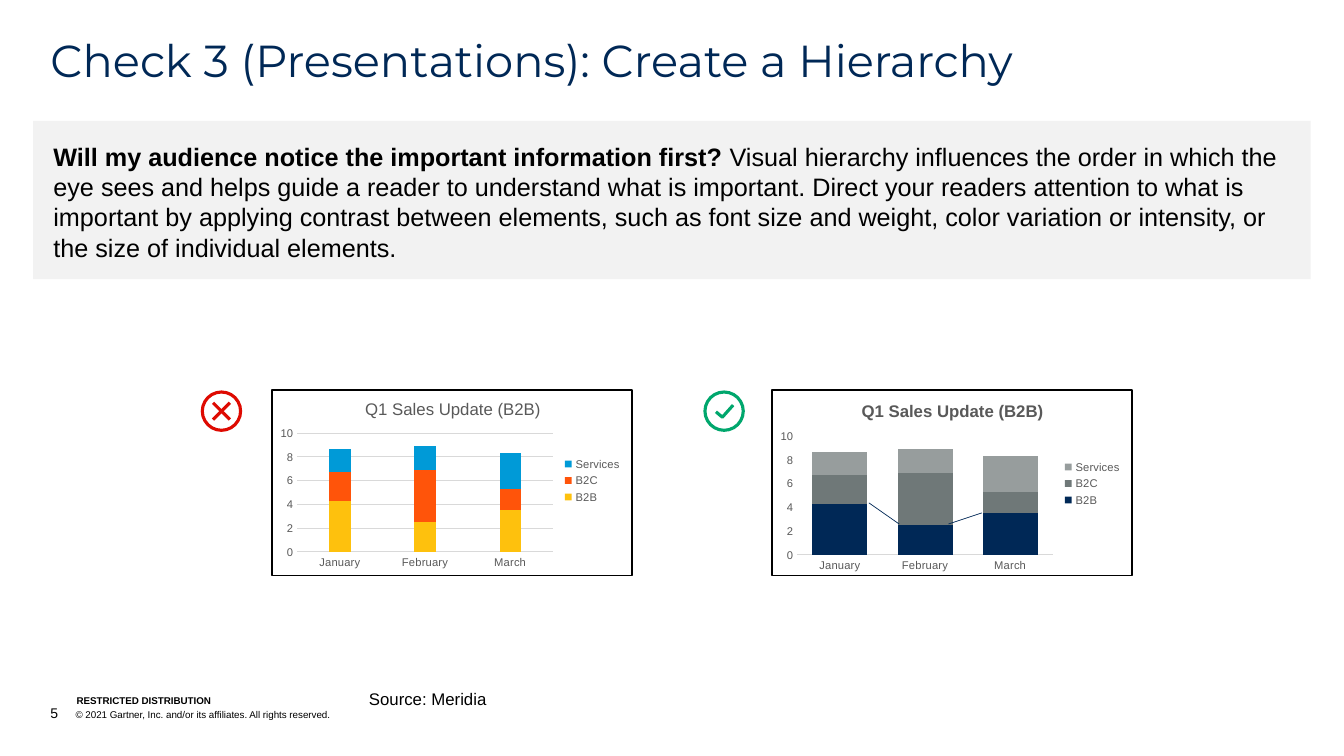
from lxml import etree
from pptx import Presentation
from pptx import util as u
from pptx.chart.data import CategoryChartData
from pptx.dml.color import RGBColor
from pptx.enum import chart as charts, shapes, text
from pptx.oxml import ns


class Theme:
    navy = RGBColor.from_string("002856")
    black = RGBColor.from_string("000000")
    white = RGBColor.from_string("FFFFFF")
    panel = RGBColor.from_string("F2F2F2")
    label = RGBColor.from_string("595959")
    rule = RGBColor.from_string("D9D9D9")
    wrong = RGBColor.from_string("DE0A01")
    right = RGBColor.from_string("00A76D")
    vivid = [RGBColor.from_string(c) for c in ("FEC10D", "FF540A", "009AD7")]
    focused = [RGBColor.from_string(c) for c in ("002856", "6F7878", "979D9D")]
    heading_font, body_font = "Montserrat", "Arial"
    heading, body, caption, number, axis, legal = map(u.Pt, (32, 18, 12, 10, 8, 7))


deck = Presentation()
deck.slide_width, deck.slide_height = u.Inches(13.33), u.Inches(7.5)
page = deck.slides.add_slide(deck.slide_layouts[6])
cell = deck.slide_width / 40  # square grid, 40 columns across


def write(box, spans, margins=(0, 0, 0, 0), anchor=text.MSO_ANCHOR.TOP, wrap=True):
    """Fill a box with one paragraph of (words, size, bold, colour, font) spans."""
    frame = box.text_frame
    frame.word_wrap, frame.vertical_anchor = wrap, anchor
    (frame.margin_left, frame.margin_top,
     frame.margin_right, frame.margin_bottom) = map(u.Inches, margins)
    para = frame.paragraphs[0]
    para.alignment = text.PP_ALIGN.LEFT
    for words, size, bold, colour, font in spans:
        span = para.add_run()
        span.text = words
        span.font.size, span.font.bold, span.font.name = size, bold, font
        span.font.color.rgb = colour
    return para


def arrange(chart, part, index, **shares):
    """Place a chart part by shares of the chart's size."""
    owner = chart._chartSpace.xpath("c:chart/c:" + part)[0]
    layout = owner.find(ns.qn("c:layout"))
    if layout is None:
        layout = etree.Element(ns.qn("c:layout"))
        owner.insert(index, layout)
    manual = etree.SubElement(layout, ns.qn("c:manualLayout"))
    if part == "plotArea":
        etree.SubElement(manual, ns.qn("c:layoutTarget")).set("val", "inner")
    for side in ("xMode", "yMode"):
        etree.SubElement(manual, ns.qn("c:" + side)).set("val", "edge")
    for side, share in shares.items():
        etree.SubElement(manual, ns.qn("c:" + side)).set("val", str(share))


# Footer, title and source
black, arial = Theme.black, Theme.body_font
bottom, top = text.MSO_ANCHOR.BOTTOM, text.MSO_ANCHOR.TOP
labels = [
    ((2.28, 20.67, 7.59, 0.36), (0, 0, 0, 0), bottom, True,
     [("RESTRICTED DISTRIBUTION", Theme.legal, True, black, arial)]),
    ((1.5, 20.97, 23.97, 0.51), (0, 0, 0, 0), bottom, True,
     [("5", Theme.number, False, black, arial),
      ("\t© 2021 Gartner, Inc. and/or its affiliates. All rights reserved.",
       Theme.legal, False, black, arial)]),
    ((1.5, 1.17, 37, 1.47), (0, 0, 0, 0), top, True,
     [("Check 3 (Presentations): Create a Hierarchy",
       Theme.heading, False, Theme.navy, Theme.heading_font)]),
    ((10.98, 20.36, 3.9, 0.9), (0, 0.05, 0.1, 0.05), top, False,
     [("Source: Meridia", Theme.caption, False, black, arial)]),
]
paras = []
for area, margins, anchor, wrap, spans in labels:
    box = page.shapes.add_textbox(*(round(n * cell) for n in area))
    paras.append(write(box, spans, margins, anchor, wrap))
indent = paras[1]._p.get_or_add_pPr()
indent.set("marL", str(u.Inches(0.25)))
indent.set("indent", str(-u.Inches(0.25)))
paras[2].line_spacing = 0.9

# Question panel
panel = page.shapes.add_shape(
    shapes.MSO_SHAPE.RECTANGLE, *(round(n * cell) for n in (0.99, 3.6, 38.02, 4.71)))
panel.shadow.inherit = False
panel.fill.solid()
panel.fill.fore_color.rgb = Theme.panel
panel.line.fill.background()
write(panel, [
    ("Will my audience notice the important information first? ",
     Theme.body, True, black, arial),
    ("Visual hierarchy influences the order in which the eye sees and helps guide "
     "a reader to understand what is important. Direct your readers attention to "
     "what is important by applying contrast between elements, such as font size "
     "and weight, color variation or intensity, or the size of individual elements.",
     Theme.body, False, black, arial),
], (0.2, 0.2, 0.2, 0.2))

# Two cards: verdict icon, frame and chart
sales = {"B2B": (4.3, 2.5, 3.5), "B2C": (2.4, 4.4, 1.8), "Services": (2, 2, 3)}
cross = [[(-0.25, -0.25), (0.25, 0.25)], [(-0.25, 0.25), (0.25, -0.25)]]
check = [[(-0.24, 0.02), (-0.05, 0.18), (0.27, -0.18)]]
card_left, card_top, card_width, card_height, card_pitch = 8.1, 11.61, 10.71, 5.52, 14.88
icon_left, icon_pitch, radius = 6.59, 14.96, 0.57
# verdict colour, mark, bar colours, gap, bold title, grid, chart lift, title corner
cards = [
    (Theme.wrong, cross, Theme.vivid, 300, False, True, 0.09, (0.25, 0.05)),
    (Theme.right, check, Theme.focused, 55, True, False, 0, (0.24, 0.04)),
]
for column, (verdict, mark, palette, gap, bold, grid, lift, corner) in enumerate(cards):
    left = card_left + column * card_pitch
    middle_x, middle_y = icon_left + column * icon_pitch, card_top + 0.63

    ring = page.shapes.add_shape(
        shapes.MSO_SHAPE.OVAL,
        *(round(n * cell) for n in (middle_x - radius, middle_y - radius,
                                    2 * radius, 2 * radius)))
    strokes = [[(round((middle_x + x) * cell), round((middle_y + y) * cell))
                for x, y in stroke] for stroke in mark]
    outline = page.shapes.build_freeform(*strokes[0][0])
    for number, (start, *others) in enumerate(strokes):
        if number:
            outline.move_to(*start)
        outline.add_line_segments(others, close=False)
    for icon in (ring, outline.convert_to_shape()):
        icon.shadow.inherit = False
        icon.fill.background()
        icon.line.color.rgb, icon.line.width = verdict, u.Pt(2.25)

    frame = page.shapes.add_shape(
        shapes.MSO_SHAPE.RECTANGLE,
        *(round(n * cell) for n in (left, card_top, card_width, card_height)))
    frame.shadow.inherit = False
    frame.fill.solid()
    frame.fill.fore_color.rgb = Theme.white
    frame.line.color.rgb, frame.line.width = black, u.Pt(1)

    data = CategoryChartData()
    data.categories = ["January", "February", "March"]
    for name, values in sales.items():
        data.add_series(name, values)
    chart = page.shapes.add_chart(
        charts.XL_CHART_TYPE.COLUMN_STACKED,
        *(round(n * cell) for n in (left, card_top - lift, card_width, card_height)),
        data).chart
    chart.font.name, chart.font.size = arial, Theme.number
    chart.font.color.rgb = black

    chart.has_title = True
    chart.chart_title.text_frame.text = "Q1 Sales Update (B2B)"
    span = chart.chart_title.text_frame.paragraphs[0].runs[0]
    span.font.size, span.font.bold, span.font.name = Theme.caption, bold, arial
    span.font.color.rgb = Theme.label

    chart.has_legend = True
    chart.legend.position = charts.XL_LEGEND_POSITION.RIGHT
    chart.legend.include_in_layout = False
    for part in (chart.legend, chart.category_axis.tick_labels,
                 chart.value_axis.tick_labels):
        part.font.size, part.font.name = Theme.axis, arial
        part.font.color.rgb = Theme.label

    for axis in (chart.category_axis, chart.value_axis):
        axis.major_tick_mark = axis.minor_tick_mark = charts.XL_TICK_MARK.NONE
    months, amounts = chart.category_axis, chart.value_axis
    months.format.line.color.rgb = Theme.rule
    months.format.line.width = u.Pt(0.75)
    amounts.format.line.fill.background()
    amounts.minimum_scale, amounts.maximum_scale, amounts.major_unit = 0, 10, 2
    amounts.has_major_gridlines = grid
    if grid:
        amounts.major_gridlines.format.line.color.rgb = Theme.rule
        amounts.major_gridlines.format.line.width = u.Pt(0.75)

    plot = chart.plots[0]
    plot.gap_width, plot.overlap, plot.vary_by_categories = gap, 100, False
    for series, colour in zip(plot.series, palette):
        series.format.fill.solid()
        series.format.fill.fore_color.rgb = colour
    arrange(chart, "title", 1, x=corner[0], y=corner[1])
    arrange(chart, "plotArea", 0, x=0.07, y=0.25, w=0.71, h=0.64)
    arrange(chart, "legend", 1, x=0.8, y=0.36, w=0.18, h=0.29)

# Trend lines between the B2B bars
for ends in ((25.86, 14.97, 26.76, 15.6), (28.23, 15.6, 29.22, 15.27)):
    trend = page.shapes.add_connector(
        shapes.MSO_CONNECTOR.STRAIGHT, *(round(n * cell) for n in ends))
    trend.line.color.rgb, trend.line.width = Theme.navy, u.Pt(0.5)
    etree.SubElement(trend._element.spPr, ns.qn("a:effectLst"))

deck.save("out.pptx")
